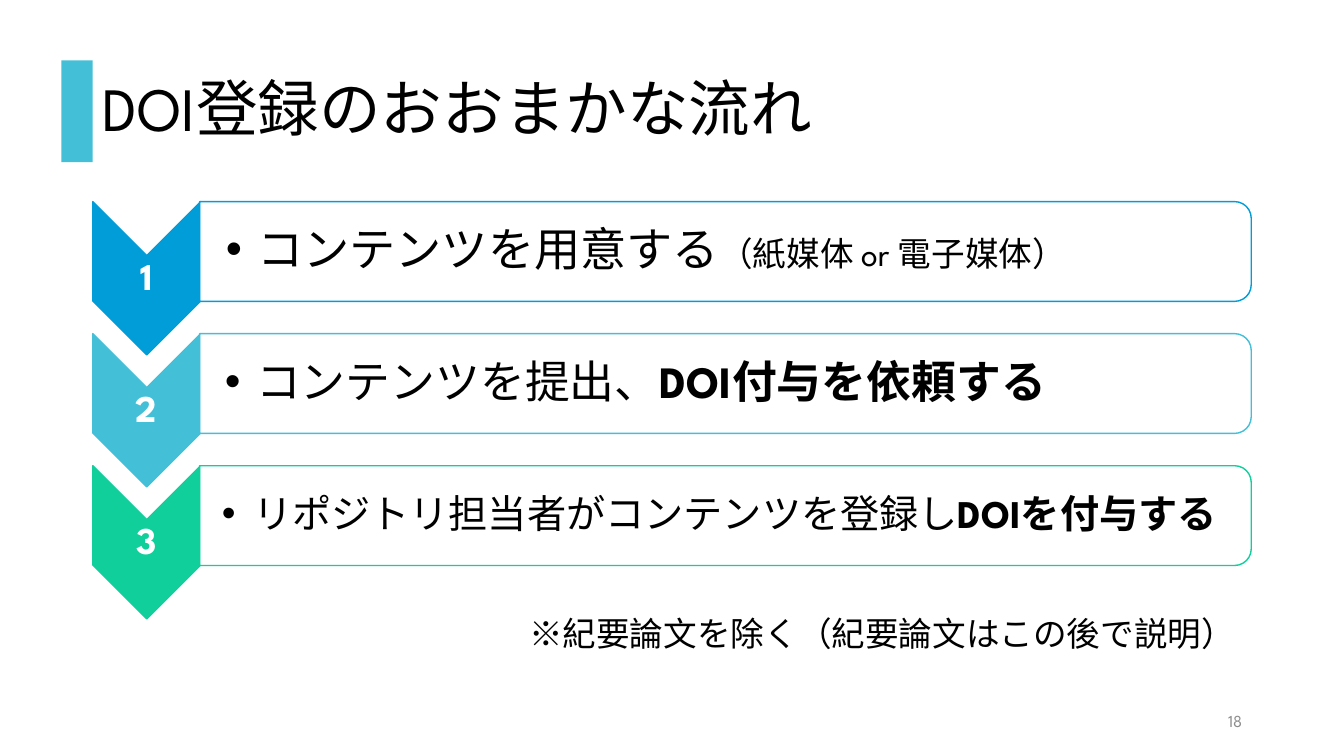
from lxml.etree import SubElement
from pptx import Presentation
from pptx.dml.color import RGBColor
from pptx.enum.shapes import MSO_SHAPE as Preset
from pptx.enum.text import MSO_ANCHOR as Anchor, MSO_AUTO_SIZE as AutoSize, PP_ALIGN as Align
from pptx.oxml.ns import qn
from pptx.util import Inches, Pt

COLORS = {"black": "000000", "white": "FFFFFF", "gray": "8C8C8C",
          "blue": "009DD9", "sky": "44BFD8", "green": "10CF9B"}
FONT = "League Spartan"
SLIDE_WIDTH, SLIDE_HEIGHT = 13.33, 7.5
MARGIN = 0.92
CONTENT_WIDTH = 11.5
TITLE_TOP, TITLE_HEIGHT = 0.6, 1.01
ROWS_TOP, ROW_PITCH = 2.0, 1.31
CHEVRON_WIDTH, CHEVRON_HEIGHT = 1.07, 1.52
BAR_LEFT, BAR_WIDTH, BAR_HEIGHT = 1.98, 10.43, 0.99
THIN = 0.02

presentation = Presentation()
presentation.slide_width = Inches(SLIDE_WIDTH)
presentation.slide_height = Inches(SLIDE_HEIGHT)
slide = presentation.slides.add_slide(presentation.slide_layouts[6])


def add_block(preset, left, top, width, height, fill, line=None, turned=False):
    """Add a filled shape; a turned one covers the given area after a quarter turn."""
    if turned:
        left, top = left + (width - height) / 2, top + (height - width) / 2
        width, height = height, width
    shape = slide.shapes.add_shape(preset, *map(Inches, (left, top, width, height)))
    shape.rotation = 90 if turned else 0
    shape.shadow.inherit = False
    shape.fill.solid()
    shape.fill.fore_color.rgb = RGBColor.from_string(COLORS[fill])
    if line:
        shape.line.color.rgb = RGBColor.from_string(COLORS[line])
        shape.line.width = Pt(1)
    else:
        shape.line.fill.background()
    return shape


def add_text(area, runs, color="black", align=Align.LEFT, spacing=1.0, insets=None,
             bullet=False, **frame_format):
    """Add a one-paragraph text box from (text, size, bold) runs."""
    frame = slide.shapes.add_textbox(*map(Inches, area)).text_frame
    frame_format = {"word_wrap": True, "vertical_anchor": Anchor.MIDDLE, **frame_format}
    for name, value in frame_format.items():
        setattr(frame, name, value)
    if insets:
        for side, inset in zip(("left", "top", "right", "bottom"), insets):
            setattr(frame, f"margin_{side}", Inches(inset))
    paragraph = frame.paragraphs[0]
    paragraph.alignment = align
    paragraph.line_spacing = spacing
    if bullet:
        properties = paragraph._p.get_or_add_pPr()
        properties.set("marL", str(Inches(0.31)))
        properties.set("indent", str(-Inches(0.31)))
        SubElement(properties, qn("a:buFont"), typeface="Arial")
        SubElement(properties, qn("a:buChar"), char="•")
    for text, size, bold in runs:
        run = paragraph.add_run()
        run.text = text
        for name, value in {"name": FONT, "size": Pt(size), "bold": bold}.items():
            setattr(run.font, name, value)
        run.font.color.rgb = RGBColor.from_string(COLORS[color])


add_block(Preset.RECTANGLE, MARGIN - 0.31, TITLE_TOP, 0.31, TITLE_HEIGHT, "sky")
add_text((MARGIN, TITLE_TOP, CONTENT_WIDTH, TITLE_HEIGHT),
         [("DOI登録のおおまかな流れ", 44, False)], spacing=0.9)

steps = [
    ("blue", 0.26, [("コンテンツを用意する", 33, False), ("（紙媒体 or 電子媒体）", 24, False)]),
    ("sky", 0.25, [("コンテンツを提出、", 32, False), ("DOI付与を依頼する", 32, True)]),
    ("green", 0.22, [("リポジトリ担当者がコンテンツを登録し", 28, False),
                     ("DOIを付与する", 28, True)]),
]
for index, (color, left_inset, runs) in enumerate(steps):
    top = ROWS_TOP + index * ROW_PITCH
    add_block(Preset.CHEVRON, MARGIN, top, CHEVRON_WIDTH, CHEVRON_HEIGHT,
              color, color, turned=True)
    add_text((MARGIN, top + 0.53, CHEVRON_WIDTH, 0.46), [(str(index + 1), 27, True)],
             color="white", align=Align.CENTER, spacing=0.9, insets=[THIN] * 4)
    bar = add_block(Preset.ROUND_2_SAME_RECTANGLE, BAR_LEFT, top, BAR_WIDTH, BAR_HEIGHT,
                    "white", color, turned=True)
    fill_color = bar._element.spPr.find(qn("a:solidFill"))[0]
    SubElement(fill_color, qn("a:alpha"), val="90000")
    add_text((BAR_LEFT, top + 0.05, BAR_WIDTH - 0.04, BAR_HEIGHT - 0.1), runs,
             spacing=0.9, insets=[left_inset, THIN, THIN, THIN], bullet=True)

add_text((5.15, 6.03, 7.27, 0.5), [("※紀要論文を除く（紀要論文はこの後で説明）", 24, False)],
         word_wrap=False, auto_size=AutoSize.SHAPE_TO_FIT_TEXT, vertical_anchor=Anchor.TOP)
add_text((MARGIN + CONTENT_WIDTH - 3, 6.95, 3, 0.4), [("18", 12, False)],
         color="gray", align=Align.RIGHT)

presentation.save("out.pptx")
